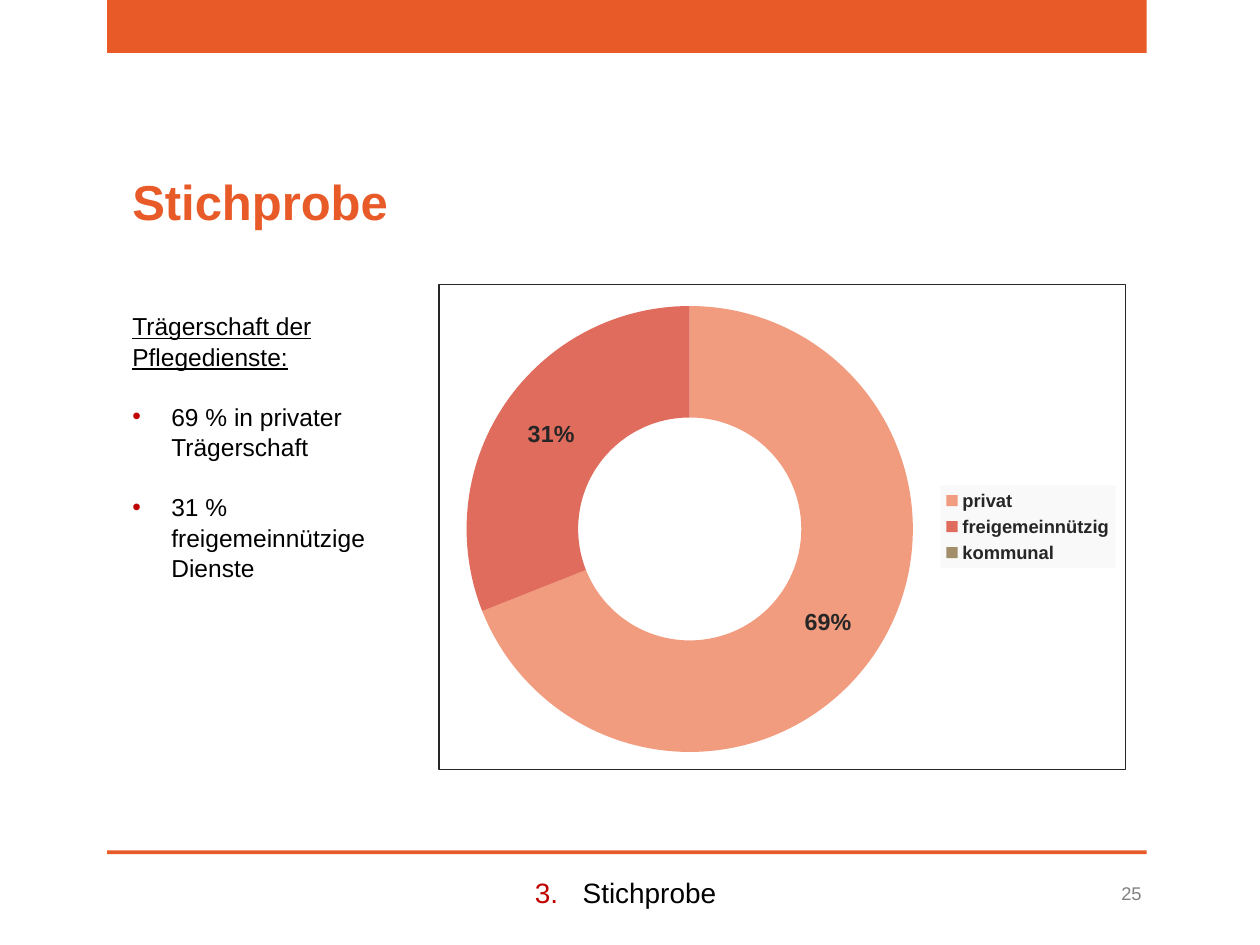
from lxml.etree import SubElement, fromstring
from pptx import Presentation
from pptx.chart.data import CategoryChartData
from pptx.dml.color import RGBColor
from pptx.enum.chart import XL_CHART_TYPE, XL_LEGEND_POSITION
from pptx.enum.shapes import MSO_SHAPE
from pptx.enum.text import MSO_ANCHOR, MSO_AUTO_SIZE, PP_ALIGN
from pptx.oxml.ns import nsdecls, qn
from pptx.util import Inches, Pt

COLORS = {
    "accent": "E85A28",
    "bullet": "C00000",
    "text": "000000",
    "chart_text": "262626",
    "number": "808080",
    "white": "FFFFFF",
    "legend": "F9F9F9",
}
SLICES = {
    "privat": (69, "F19C7E"),
    "freigemeinnützig": (31, "DF6C5D"),
    "kommunal": (0, "A28E6A"),
}
FONT = "Arial"


def rgb(name):
    """Return the palette colour as an RGBColor."""
    return RGBColor.from_string(COLORS[name])


def set_font(font, size, color="text", bold=False, underline=False):
    """Format a font object."""
    font.name = FONT
    font.size = Pt(size)
    font.bold = bold
    font.underline = underline
    font.color.rgb = rgb(color)


def set_bullet(p, tag, indent, **attrs):
    """Give a paragraph a coloured bullet or number with a hanging indent."""
    pPr = p._p.get_or_add_pPr()
    pPr.set("marL", str(Inches(indent)))
    pPr.set("indent", str(-Inches(indent)))
    clr = SubElement(pPr, qn("a:buClr"))
    SubElement(clr, qn("a:srgbClr"), val=COLORS["bullet"])
    SubElement(pPr, qn("a:buFont"), typeface=FONT)
    SubElement(pPr, qn(tag), **attrs)


def add_text(tf, text, align=PP_ALIGN.LEFT, before=0, spacing=1.0, **font):
    """Write a paragraph into a text frame and return it."""
    p = tf.paragraphs[0] if not tf.text else tf.add_paragraph()
    p.alignment = align
    p.space_before = Pt(before)
    p.line_spacing = spacing
    r = p.add_run()
    r.text = text
    set_font(r.font, **font)
    return p


def place(sp, left, top, width, height, anchor=MSO_ANCHOR.TOP):
    """Position a text shape and return its prepared text frame."""
    sp.left, sp.top = Inches(left), Inches(top)
    sp.width, sp.height = Inches(width), Inches(height)
    tf = sp.text_frame
    tf.word_wrap = True
    tf.auto_size = MSO_AUTO_SIZE.NONE
    tf.vertical_anchor = anchor
    return tf


def add_textbox(s, *box, **kwargs):
    """Add a text box and return its text frame."""
    return place(s.shapes.add_textbox(0, 0, 0, 0), *box, **kwargs)


def add_bar(s, top, height):
    """Add an accent bar across the content width."""
    sp = s.shapes.add_shape(MSO_SHAPE.RECTANGLE, Inches(0.85), Inches(top),
                            Inches(8.25), Inches(height))
    sp.shadow.inherit = False
    sp.fill.solid()
    sp.fill.fore_color.rgb = rgb("accent")
    sp.line.fill.background()


def add_body(s):
    """Fill the body placeholder with the heading and its bullets."""
    tf = place(s.placeholders[1], 0.95, 2.41, 2.23, 2.22)
    p = add_text(tf, "Trägerschaft der Pflegedienste:", size=14, spacing=1.04,
                 underline=True)
    pPr = p._p.get_or_add_pPr()
    pPr.set("marL", "0")
    pPr.set("indent", "0")
    SubElement(pPr, qn("a:buNone"))
    for text in ("69 % in privater Trägerschaft", "31 % freigemeinnützige Dienste"):
        p = add_text(tf, text, size=14, spacing=1.04, before=16.8)
        set_bullet(p, "a:buChar", 0.31, char="•")


def layout_xml(x, y, w, h, inner=False):
    """Build a manual chart layout from fractions of the chart area."""
    target = '<c:layoutTarget val="inner"/>' if inner else ""
    return fromstring(
        f'<c:layout {nsdecls("c")}><c:manualLayout>{target}'
        '<c:xMode val="edge"/><c:yMode val="edge"/>'
        f'<c:x val="{x}"/><c:y val="{y}"/><c:w val="{w}"/><c:h val="{h}"/>'
        '</c:manualLayout></c:layout>')


def area_xml(fill, border=None):
    """Build the fill and border of a chart part."""
    paint = '<a:solidFill><a:srgbClr val="{}"/></a:solidFill>'.format
    line = paint(COLORS[border]) if border else "<a:noFill/>"
    return fromstring(f'<c:spPr {nsdecls("c", "a")}>{paint(COLORS[fill])}'
                      f'<a:ln w="{Pt(0.75)}">{line}</a:ln></c:spPr>')


def add_doughnut(s):
    """Add the doughnut chart with percent labels and legend."""
    data = CategoryChartData()
    data.categories = list(SLICES)
    data.add_series("Series 1", [value for value, _ in SLICES.values()])
    chart = s.shapes.add_chart(XL_CHART_TYPE.DOUGHNUT, Inches(3.48), Inches(2.25),
                               Inches(5.46), Inches(3.86), data).chart
    chart.has_title = False
    set_font(chart.font, 10)
    plot = chart.plots[0]
    plot.vary_by_categories = True
    for i, (_, color) in enumerate(SLICES.values()):
        fmt = plot.series[0].points[i].format
        fmt.fill.solid()
        fmt.fill.fore_color.rgb = RGBColor.from_string(color)
        fmt.line.fill.background()

    labels = plot.series[0].data_labels
    labels.show_percentage = True
    labels.show_value = False
    labels.number_format = "0%;;"
    labels.number_format_is_linked = False
    set_font(labels.font, 13.3, "chart_text", bold=True)

    chart.has_legend = True
    legend = chart.legend
    legend.position = XL_LEGEND_POSITION.RIGHT
    legend.include_in_layout = False
    set_font(legend.font, 10.5, "chart_text", bold=True)
    el = legend._element
    el.find(qn("c:legendPos")).addnext(layout_xml(0.71, 0.45, 0.26, 0.19))
    el.find(qn("c:overlay")).addnext(area_xml("legend"))

    root = chart._chartSpace
    area = root.find(".//" + qn("c:plotArea"))
    for old in area.findall(qn("c:layout")):
        area.remove(old)
    area.insert(0, layout_xml(0.04, 0.04, 0.65, 0.93, inner=True))
    root.find(qn("c:chart")).addnext(area_xml("white", "chart_text"))


def main():
    """Build and save the slide."""
    prs = Presentation()
    prs.slide_width, prs.slide_height = Inches(10), Inches(7.5)
    s = prs.slides.add_slide(prs.slide_layouts[1])
    add_bar(s, 0, 0.42)
    add_bar(s, 6.75, 0.03)
    tf = add_textbox(s, 0.83, 6.9, 8.27, 0.37)
    p = add_text(tf, "Stichprobe", align=PP_ALIGN.CENTER, size=16)
    set_bullet(p, "a:buAutoNum", 0.38, type="arabicPeriod", startAt="3")
    tf = place(s.shapes.title, 0.95, 1.31, 2.23, 0.57, anchor=MSO_ANCHOR.MIDDLE)
    add_text(tf, "Stichprobe", size=28, color="accent", bold=True)
    tf = add_textbox(s, 8.33, 6.89, 0.83, 0.4, anchor=MSO_ANCHOR.MIDDLE)
    add_text(tf, "25", align=PP_ALIGN.RIGHT, size=10.5, color="number")
    add_body(s)
    add_doughnut(s)
    prs.save("out.pptx")


if __name__ == "__main__":
    main()
